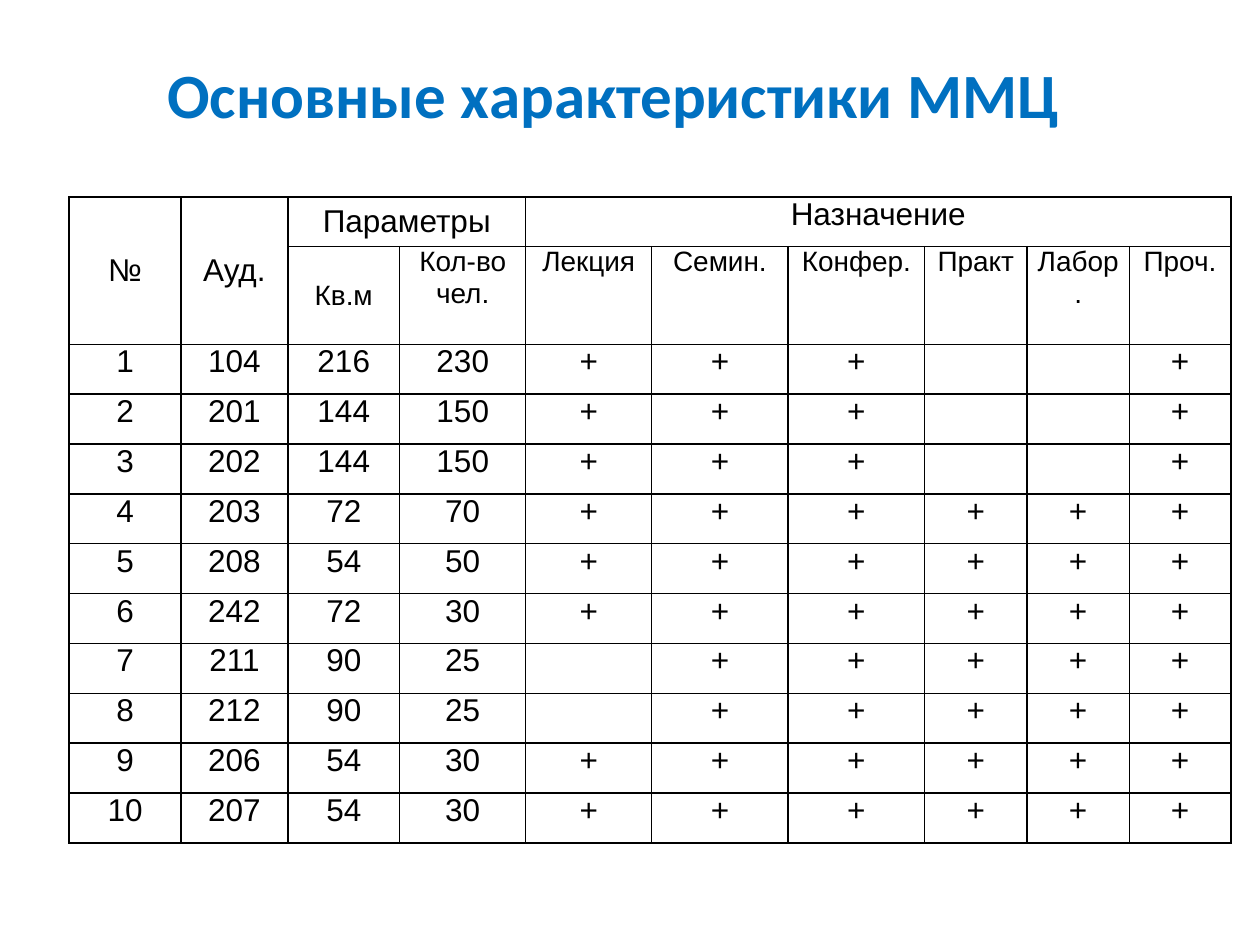
from lxml.etree import SubElement
from pptx import Presentation
from pptx.dml.color import RGBColor
from pptx.enum.text import MSO_ANCHOR, PP_ALIGN
from pptx.oxml.ns import qn
from pptx.util import Pt

BLUE = RGBColor(0x00, 0x70, 0xC0)
BLACK = RGBColor(0x00, 0x00, 0x00)

COL_WIDTHS = [64, 61, 64, 72, 72, 78, 78, 58.5, 58.5, 58]
ROW_HEIGHT, SUBHEAD_HEIGHT = 28.5, 55.75
GROUPS = ["№", "Ауд.", "Параметры", "", "Назначение", "", "", "", "", ""]
SUBHEADS = ["", "", "Кв.м", "Кол-во чел.", "Лекция", "Семин.", "Конфер.",
            "Практ", "Лабор.", "Проч."]
# Room, area, seats, and which of the six uses apply
ROOMS = [
    (104, 216, 230, "+++  +"),
    (201, 144, 150, "+++  +"),
    (202, 144, 150, "+++  +"),
    (203, 72, 70, "++++++"),
    (208, 54, 50, "++++++"),
    (242, 72, 30, "++++++"),
    (211, 90, 25, " +++++"),
    (212, 90, 25, " +++++"),
    (206, 54, 30, "++++++"),
    (207, 54, 30, "++++++"),
]
MERGES = [((0, 0), (1, 0)), ((0, 1), (1, 1)), ((0, 2), (0, 3)), ((0, 4), (0, 9))]
MIDDLE_CELLS = [(0, 0), (0, 1), (0, 2), (1, 2)]


def format_text(p, font, size, color, bold=False):
    p.alignment = PP_ALIGN.CENTER
    for r in p.runs:
        r.font.name = font
        r.font.size = Pt(size)
        r.font.bold = bold
        r.font.color.rgb = color


def add_title(s, left, top, width, height):
    sp = s.shapes.title
    sp.left, sp.top, sp.width, sp.height = Pt(left), Pt(top), Pt(width), Pt(height)
    tf = sp.text_frame
    tf.text = "Основные характеристики ММЦ"
    tf.vertical_anchor = MSO_ANCHOR.MIDDLE
    format_text(tf.paragraphs[0], "Calibri", 36, BLUE, bold=True)


def set_borders(cell, color, width):
    tc_pr = cell._tc.get_or_add_tcPr()
    for side in ("a:lnL", "a:lnR", "a:lnT", "a:lnB"):
        ln = SubElement(tc_pr, qn(side), w=str(Pt(width)))
        fill = SubElement(ln, qn("a:solidFill"))
        SubElement(fill, qn("a:srgbClr"), val=str(color))


def format_cell(cell, text, size, middle):
    cell.margin_left = cell.margin_right = Pt(5)
    cell.margin_top = cell.margin_bottom = Pt(0)
    cell.vertical_anchor = MSO_ANCHOR.MIDDLE if middle else MSO_ANCHOR.TOP
    set_borders(cell, BLACK, 1)
    cell.fill.background()
    if text:
        cell.text_frame.text = text
        format_text(cell.text_frame.paragraphs[0], "Arial", size, BLACK)


def add_room_table(s, left, top, width, height):
    rows = [GROUPS, SUBHEADS]
    for number, (room, area, seats, uses) in enumerate(ROOMS, 1):
        rows.append([str(number), str(room), str(area), str(seats),
                     *(use.strip() for use in uses)])

    table = s.shapes.add_table(len(rows), len(COL_WIDTHS), Pt(left), Pt(top),
                               Pt(width), Pt(height)).table
    table.first_row = table.horz_banding = False
    for column, col_width in zip(table.columns, COL_WIDTHS):
        column.width = Pt(col_width)

    # Cells
    for i, row in enumerate(rows):
        table.rows[i].height = Pt(SUBHEAD_HEIGHT if i == 1 else ROW_HEIGHT)
        for j, text in enumerate(row):
            format_cell(table.cell(i, j), text, 16 if i == 1 else 18,
                        (i, j) in MIDDLE_CELLS)

    # Header spans
    for first, last in MERGES:
        table.cell(*first).merge(table.cell(*last))


def main():
    prs = Presentation()
    prs.slide_width, prs.slide_height = Pt(720), Pt(540)
    s = prs.slides.add_slide(prs.slide_layouts[5])
    add_title(s, 44.5, 28, 612, 50.5)
    add_room_table(s, 39.5, 112.5, sum(COL_WIDTHS),
                   ROW_HEIGHT * (len(ROOMS) + 1) + SUBHEAD_HEIGHT)
    prs.save("out.pptx")


if __name__ == "__main__":
    main()
